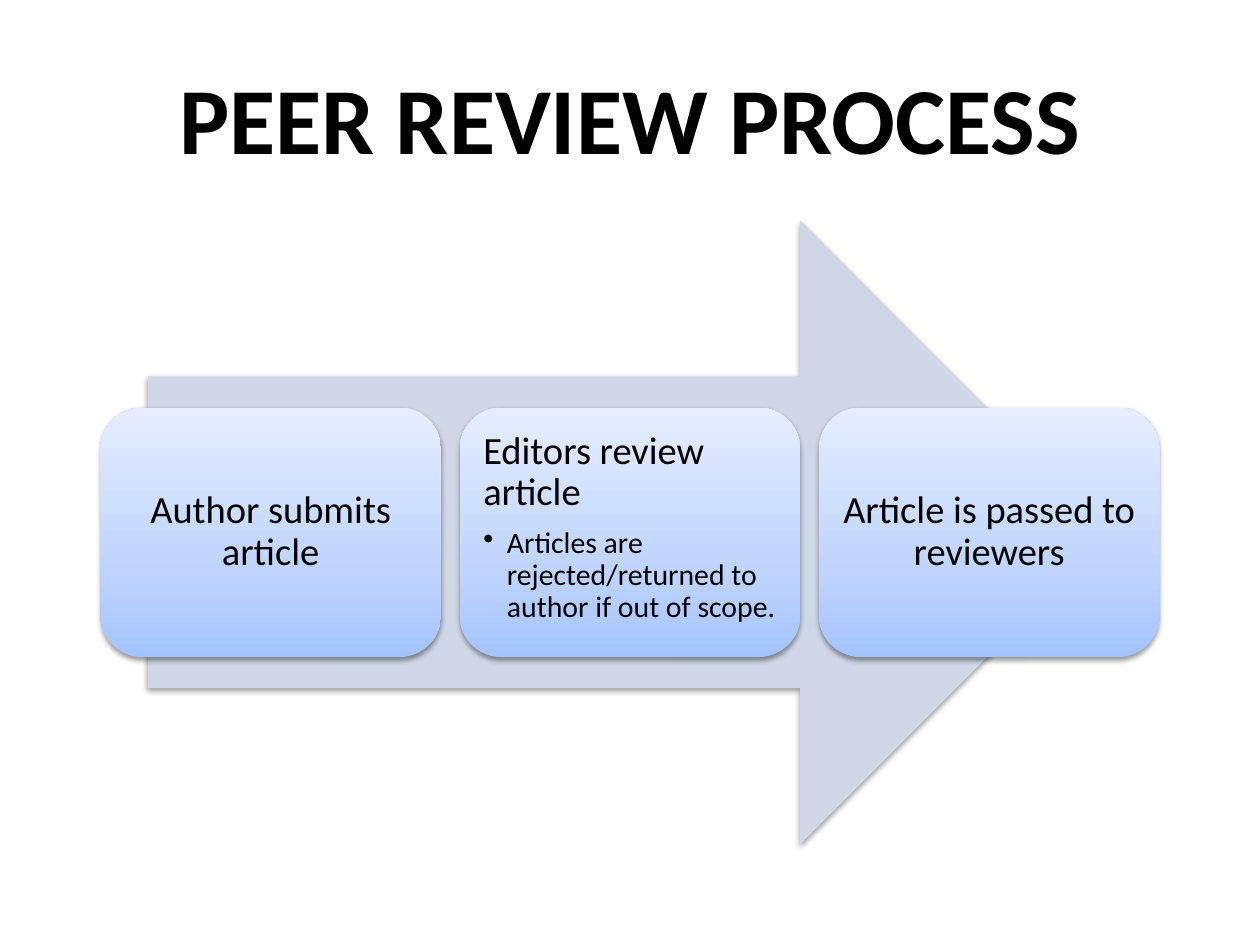
from copy import deepcopy

from lxml.etree import SubElement
from pptx import Presentation
from pptx.dml.color import RGBColor
from pptx.enum.shapes import MSO_SHAPE
from pptx.enum.text import MSO_ANCHOR, PP_ALIGN
from pptx.oxml.ns import qn
from pptx.util import Pt

BLACK = RGBColor(0x00, 0x00, 0x00)
ARROW_FILL = RGBColor(0xD0, 0xD8, 0xE8)
CARD_STOPS = [
    (0, RGBColor(0xA4, 0xC4, 0xFF)),
    (0.35, RGBColor(0xBF, 0xD4, 0xFF)),
    (1, RGBColor(0xE6, 0xEE, 0xFF)),
]
FONT = "Calibri"
STEPS = [
    ("Author submits article", None),
    ("Editors review article",
     "Articles are rejected/returned to author if out of scope."),
    ("Article is passed to reviewers", None),
]


def add_text_frame(page, left, top, width, height, inset, anchor):
    frame = page.shapes.add_textbox(Pt(left), Pt(top), Pt(width), Pt(height)).text_frame
    frame.word_wrap = True
    frame.vertical_anchor = anchor
    frame.margin_left = frame.margin_right = Pt(inset)
    frame.margin_top = frame.margin_bottom = Pt(inset)
    return frame


def write(para, text, size, bold=False, align=PP_ALIGN.LEFT, spacing=1.0, after=0):
    para.alignment = align
    para.line_spacing = spacing
    para.space_after = Pt(after)
    span = para.add_run()
    span.text = text
    span.font.name = FONT
    span.font.size = Pt(size)
    span.font.bold = bold
    span.font.color.rgb = BLACK


def set_bullet(para, indent):
    properties = para._p.get_or_add_pPr()
    properties.set("marL", str(Pt(indent)))
    properties.set("indent", str(-Pt(indent)))
    SubElement(properties, qn("a:buChar")).set("char", "•")


def add_soft_shape(page, kind, left, top, width, height):
    """Add a borderless shape with a soft shadow below it."""
    shape = page.shapes.add_shape(kind, Pt(left), Pt(top), Pt(width), Pt(height))
    shape.line.fill.background()
    shape.shadow.inherit = False
    effects = shape._element.spPr.find(qn("a:effectLst"))
    shadow = SubElement(effects, qn("a:outerShdw"), blurRad=str(Pt(3.1)),
                        dist=str(Pt(1.6)), dir="5400000", rotWithShape="0")
    color = SubElement(shadow, qn("a:srgbClr"), val=str(BLACK))
    SubElement(color, qn("a:alpha"), val="38000")
    return shape


def fill_card(shape):
    shape.fill.gradient()
    stop_list = shape._element.spPr.find(qn("a:gradFill")).find(qn("a:gsLst"))
    stop_list.append(deepcopy(stop_list[0]))
    for stop, (position, color) in zip(shape.fill.gradient_stops, CARD_STOPS):
        stop.position = position
        stop.color.rgb = color
    shape.fill.gradient_angle = 90


def add_title(page, left, top, width, height):
    frame = add_text_frame(page, left, top, width, height, 7.2, MSO_ANCHOR.MIDDLE)
    write(frame.paragraphs[0], "PEER REVIEW PROCESS", 54, bold=True,
          align=PP_ALIGN.CENTER)


def add_card(page, left, top, width, height, heading, detail):
    fill_card(add_soft_shape(page, MSO_SHAPE.ROUNDED_RECTANGLE, left, top, width, height))
    pad = 6.9
    anchor = MSO_ANCHOR.TOP if detail else MSO_ANCHOR.MIDDLE
    align = PP_ALIGN.LEFT if detail else PP_ALIGN.CENTER
    frame = add_text_frame(page, left + pad, top + pad, width - 2 * pad,
                           height - 2 * pad, 6.6, anchor)
    write(frame.paragraphs[0], heading, 22, align=align, spacing=0.9, after=7.7)
    if detail:
        para = frame.add_paragraph()
        write(para, detail, 17, spacing=0.9, after=2.55)
        para.level = 1
        set_bullet(para, 13.5)


def add_process(page, left, top, width, height):
    # Arrow behind the cards, centred in the box
    arrow_width = 0.85 * 648
    arrow = add_soft_shape(page, MSO_SHAPE.RIGHT_ARROW, left + (width - arrow_width) / 2,
                           top, arrow_width, height)
    arrow.fill.solid()
    arrow.fill.fore_color.rgb = ARROW_FILL

    # Equal cards in a row, halfway down the arrow
    card_width, card_height = 194.6, 0.4 * height
    pitch = (width - card_width) / (len(STEPS) - 1)
    for index, (heading, detail) in enumerate(STEPS):
        add_card(page, left + index * pitch, top + (height - card_height) / 2,
                 card_width, card_height, heading, detail)


def main():
    deck = Presentation()
    deck.slide_width, deck.slide_height = Pt(720), Pt(540)
    page = deck.slides.add_slide(deck.slide_layouts[6])
    add_title(page, 36, 21.6, 648, 90)
    add_process(page, 57.4, 126, 605.2, 356.4)
    deck.save("out.pptx")


if __name__ == "__main__":
    main()
